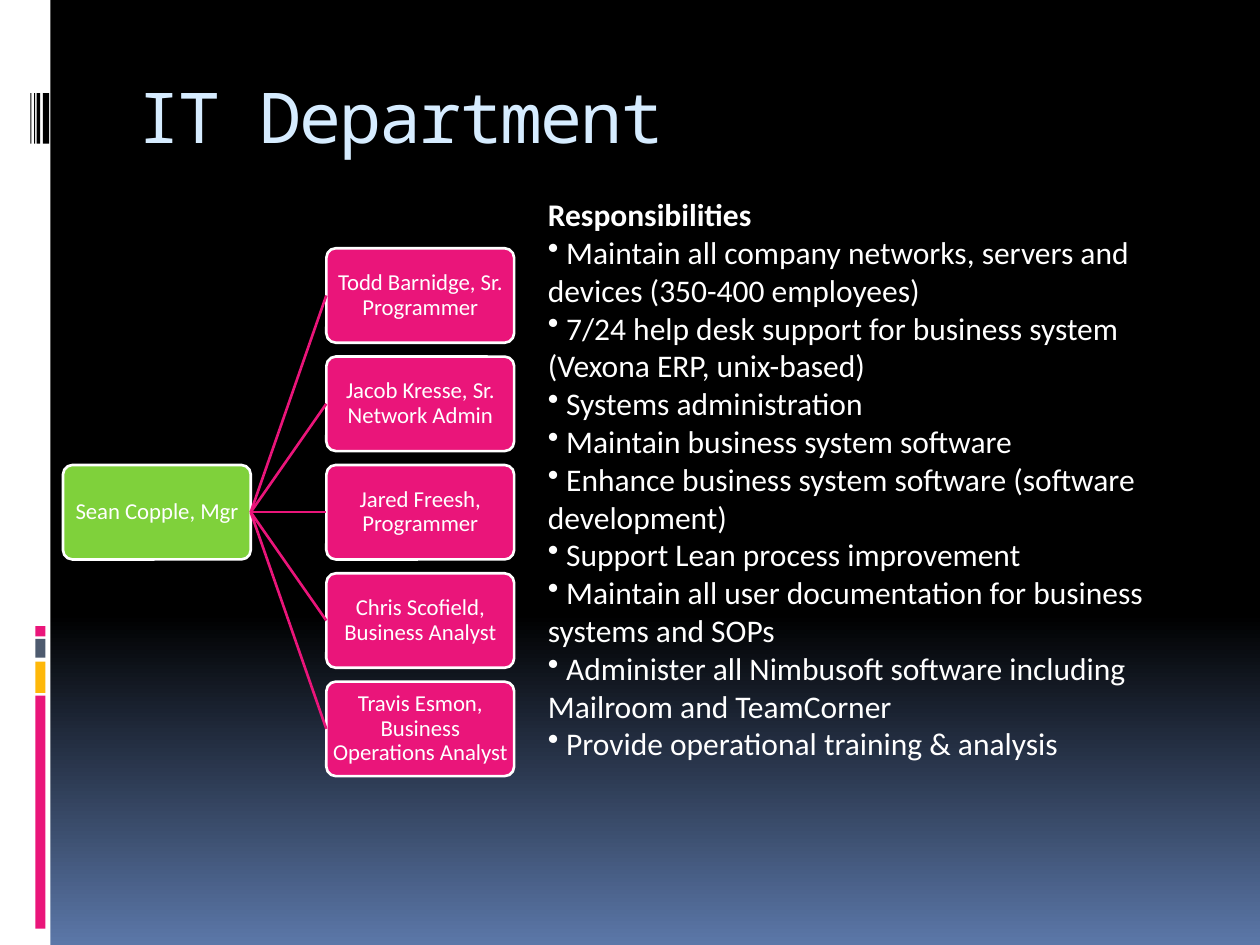
from lxml import etree
from pptx import Presentation
from pptx.dml.color import RGBColor
from pptx.enum import shapes, text
from pptx.oxml.ns import qn
from pptx.util import Inches, Pt

WHITE, BLACK, PINK = "FFFFFF", "000000", "EA157A"
GREEN, GOLD, SLATE = "7FD13B", "FEB80A", "4E5B6F"
BOX_W, BOX_H, BOX_STEP = 1.49, 0.75, 0.86

# left, top, width, height, colour
SIDE_BARS = [
    (0, 0, 0.4, 7.5, WHITE),
    (0.28, 5.52, 0.08, 1.85, PINK),
    (0.28, 5.25, 0.08, 0.25, GOLD),
    (0.28, 5.07, 0.08, 0.15, SLATE),
    (0.28, 4.97, 0.08, 0.08, PINK),
    (0.34, 0.74, 0.05, 0.4, BLACK),
    (0.29, 0.74, 0.03, 0.4, BLACK),
    (0.27, 0.74, 0.01, 0.4, BLACK),
    (0.24, 0.74, 0.01, 0.4, BLACK),
]
MANAGER = "Sean Copple, Mgr"
TEAM = [
    "Todd Barnidge, Sr. Programmer",
    "Jacob Kresse, Sr. Network Admin",
    "Jared Freesh, Programmer",
    "Chris Scofield, Business Analyst",
    "Travis Esmon, Business Operations Analyst",
]
DUTIES = [
    "Maintain all company networks, servers and devices (350-400 employees)",
    "7/24 help desk support for business system (Vexona ERP, unix-based)",
    "Systems administration",
    "Maintain business system software",
    "Enhance business system software (software development)",
    "Support Lean process improvement",
    "Maintain all user documentation for business systems and SOPs",
    "Administer all Nimbusoft software including Mailroom and TeamCorner",
    "Provide operational training & analysis",
]


def rgb(value):
    return RGBColor.from_string(value)


def set_all(obj, values):
    for name, value in values.items():
        setattr(obj, name, value)


def add_run(p, words, color=WHITE, **font):
    r = p.add_run()
    r.text = words
    set_all(r.font, {"name": "Calibri", **font})
    r.font.color.rgb = rgb(color)
    return r


def add_block(s, kind, left, top, width, height, fill):
    sp = s.shapes.add_shape(kind, *map(Inches, (left, top, width, height)))
    sp.shadow.inherit = False
    sp.fill.solid()
    sp.fill.fore_color.rgb = rgb(fill)
    sp.line.fill.background()
    return sp


def add_person(s, left, top, fill, words):
    sp = add_block(s, shapes.MSO_SHAPE.ROUNDED_RECTANGLE, left, top, BOX_W, BOX_H, fill)
    sp.adjustments[0] = 0.1
    sp.line.color.rgb = rgb(WHITE)
    sp.line.width = Pt(1.5)
    tf = sp.text_frame
    sides = ("left", "top", "right", "bottom")
    set_all(tf, {f"margin_{side}": Inches(0.01) for side in sides})
    set_all(tf, {"word_wrap": True, "vertical_anchor": text.MSO_ANCHOR.MIDDLE})
    p = tf.paragraphs[0]
    set_all(p, {"alignment": text.PP_ALIGN.CENTER, "line_spacing": 0.9})
    add_run(p, words, size=Pt(13))
    return sp


def add_link(s, boss, member):
    line = s.shapes.add_connector(shapes.MSO_CONNECTOR.STRAIGHT, 0, 0, 0, 0)
    line.begin_connect(boss, 3)
    line.end_connect(member, 1)
    line.line.color.rgb = rgb(PINK)
    line.line.width = Pt(1.5)
    etree.SubElement(line._element.spPr, qn("a:effectLst"))


def add_text_frame(s, left, top, width, height):
    box = s.shapes.add_textbox(*map(Inches, (left, top, width, height)))
    box.text_frame.word_wrap = True
    return box.text_frame


def add_title(s, words):
    tf = add_text_frame(s, 1, 0.56, 8.5, 1)
    tf.margin_top = Inches(0.02)
    r = add_run(tf.paragraphs[0], words, "D6ECFF", name="Noto Sans Mono", size=Pt(40))
    r.font._element.set("spc", "-100")


def add_duties(s):
    tf = add_text_frame(s, 4.25, 1.5, 5.25, 4.64)
    add_run(tf.paragraphs[0], "Responsibilities", size=Pt(18), bold=True)
    for duty in DUTIES:
        p = tf.add_paragraph()
        etree.SubElement(p._p.get_or_add_pPr(), qn("a:buChar"), char="•")
        add_run(p, " " + duty, size=Pt(18))


def set_background(s):
    fill = s.background.fill
    fill.gradient()
    fill.gradient_angle = 270
    for stop, position, color in zip(fill.gradient_stops, (0.65, 1), (BLACK, "5B77A8")):
        stop.position = position
        stop.color.rgb = rgb(color)


def main():
    prs = Presentation()
    set_all(prs, {"slide_width": Inches(10), "slide_height": Inches(7.5)})
    s = prs.slides.add_slide(prs.slide_layouts[6])

    # Background and side decoration
    set_background(s)
    for bar in SIDE_BARS:
        add_block(s, shapes.MSO_SHAPE.RECTANGLE, *bar)

    add_title(s, "IT Department")

    # Organisation chart, manager level with the middle team member
    top = 1.97
    boss = add_person(s, 0.5, top + len(TEAM) // 2 * BOX_STEP, GREEN, MANAGER)
    for i, name in enumerate(TEAM):
        member = add_person(s, 2.59, top + i * BOX_STEP, PINK, name)
        add_link(s, boss, member)

    add_duties(s)
    prs.save("out.pptx")


if __name__ == "__main__":
    main()
